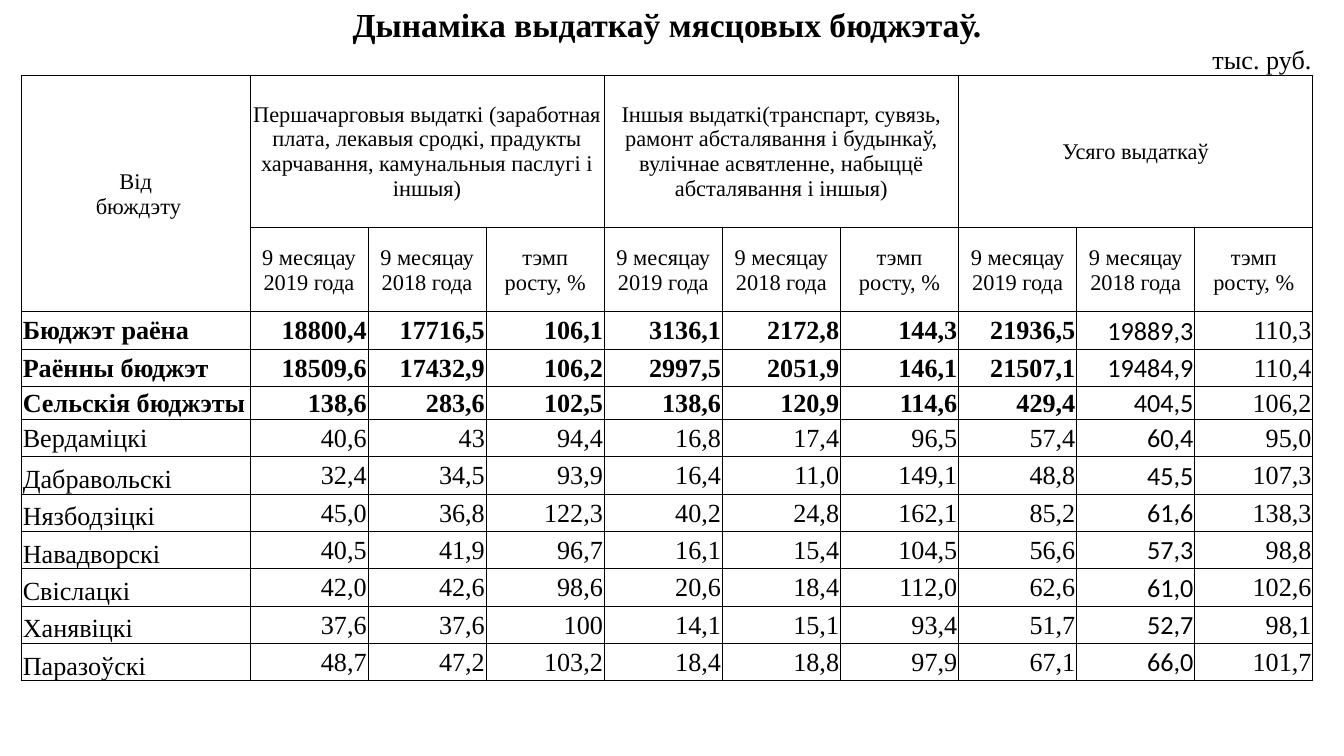
from lxml.etree import SubElement
from pptx import Presentation
from pptx.dml.color import RGBColor
from pptx.enum.text import MSO_ANCHOR as Anchor, PP_ALIGN as Align
from pptx.oxml.ns import qn
from pptx.util import Inches, Pt

COLORS = {"text": "000000", "border": "000000"}
SERIF, SANS = "Times New Roman", "Calibri"

LEFT, TOP, WIDTH = 0.16, 0.03, 9.61
NAME_WIDTH = 1.7
LINE_HEIGHT = 20 / 72
ROW_HEIGHTS = [0.3, 0.23, 1.13, 0.63, LINE_HEIGHT, LINE_HEIGHT, 0.23] + [LINE_HEIGHT] * 7
COLUMNS = 10
GROUP_ROW, PERIOD_ROW, DATA_ROW = 2, 3, 4
CURRENT_YEAR_COLUMN, PAST_YEAR_COLUMN = 7, 8

GROUPS = [
    "Першачарговыя выдаткі (заработная плата, лекавыя сродкі, прадукты "
    "харчавання, камунальныя паслугі і іншыя)",
    "Іншыя выдаткі(транспарт, сувязь, рамонт абсталявання і будынкаў, "
    "вулічнае асвятленне, набыццё абсталявання і іншыя)",
    "Усяго выдаткаў",
]
PERIODS = ["9 месяцау 2019 года", "9 месяцау 2018 года", "тэмп\nросту, %"]
PERIOD_HEADINGS = ["9 месяцау\n2019 года"] + (PERIODS * len(GROUPS))[1:]

TOTALS = [
    ("Бюджэт раёна", "18800,4 17716,5 106,1 3136,1 2172,8 144,3 21936,5 19889,3 110,3"),
    ("Раённы бюджэт", "18509,6 17432,9 106,2 2997,5 2051,9 146,1 21507,1 19484,9 110,4"),
    ("Сельскія бюджэты", "138,6 283,6 102,5 138,6 120,9 114,6 429,4 404,5 106,2"),
]
VILLAGES = [
    ("Вердаміцкі", "40,6 43 94,4 16,8 17,4 96,5 57,4 60,4 95,0"),
    ("Дабравольскі", "32,4 34,5 93,9 16,4 11,0 149,1 48,8 45,5 107,3"),
    ("Нязбодзіцкі", "45,0 36,8 122,3 40,2 24,8 162,1 85,2 61,6 138,3"),
    ("Навадворскі", "40,5 41,9 96,7 16,1 15,4 104,5 56,6 57,3 98,8"),
    ("Свіслацкі", "42,0 42,6 98,6 20,6 18,4 112,0 62,6 61,0 102,6"),
    ("Ханявіцкі", "37,6 37,6 100 14,1 15,1 93,4 51,7 52,7 98,1"),
    ("Паразоўскі", "48,7 47,2 103,2 18,4 18,8 97,9 67,1 66,0 101,7"),
]


def set_borders(cell, sides):
    """Draw thin lines on the given sides (of "LRTB") and clear the others."""
    tc_pr = cell._tc.get_or_add_tcPr()
    for side in "LRTB":
        ln = SubElement(tc_pr, qn(f"a:ln{side}"), w=str(Pt(0.5)))
        if side in sides:
            fill = SubElement(ln, qn("a:solidFill"))
            SubElement(fill, qn("a:srgbClr"), val=COLORS["border"])
        else:
            SubElement(ln, qn("a:noFill"))


def prepare_cell(cell, row):
    """Set borders, fill and margins, and keep an empty cell from growing its row."""
    if row == 0:
        sides = ""
    elif row == 1:
        sides = "B"
    else:
        sides = "LRTB"
    set_borders(cell, sides)
    cell.fill.background()
    cell.margin_left = cell.margin_right = cell.margin_top = Inches(0.01)
    cell.margin_bottom = 0
    cell.text_frame.paragraphs[0]._p.get_or_add_endParaRPr().set("sz", "1200")


def write(cell, text, size=12, align=Align.CENTER, anchor=Anchor.MIDDLE,
          bold=False, font=SERIF):
    cell.text_frame.text = text
    cell.vertical_anchor = anchor
    for p in cell.text_frame.paragraphs:
        p.alignment = align
        for r in p.runs:
            r.font.size = Pt(size)
            r.font.name = font
            r.font.bold = bold
            r.font.color.rgb = RGBColor.from_string(COLORS["text"])


def add_grid(s):
    frame = s.shapes.add_table(len(ROW_HEIGHTS), COLUMNS, Inches(LEFT), Inches(TOP),
                               Inches(WIDTH), Inches(sum(ROW_HEIGHTS)))
    table = frame.table
    table.first_row = table.horz_banding = False
    value_width = (WIDTH - NAME_WIDTH) / (COLUMNS - 1)
    for i, column in enumerate(table.columns):
        column.width = Inches(value_width if i else NAME_WIDTH)
    for i, height in enumerate(ROW_HEIGHTS):
        table.rows[i].height = Inches(height)
        for j in range(COLUMNS):
            prepare_cell(table.cell(i, j), i)
    return table


def fill_headings(table):
    last = COLUMNS - 1
    table.cell(0, 0).merge(table.cell(0, last))
    write(table.cell(0, 0), "Дынаміка выдаткаў мясцовых бюджэтаў.", size=18,
          anchor=Anchor.BOTTOM, bold=True)
    for col in (1, 3, 5):
        table.cell(1, col).merge(table.cell(1, col + 1))
    write(table.cell(1, last), "тыс. руб.", size=14, align=Align.RIGHT,
          anchor=Anchor.BOTTOM)

    table.cell(GROUP_ROW, 0).merge(table.cell(PERIOD_ROW, 0))
    write(table.cell(GROUP_ROW, 0), "Від\n бюждэту")
    for i, group in enumerate(GROUPS):
        first = 1 + i * len(PERIODS)
        table.cell(GROUP_ROW, first).merge(table.cell(GROUP_ROW, first + 2))
        write(table.cell(GROUP_ROW, first), group)
    for col, period in enumerate(PERIOD_HEADINGS, start=1):
        write(table.cell(PERIOD_ROW, col), period)


def fill_budgets(table):
    for i, (name, values) in enumerate(TOTALS + VILLAGES):
        row = DATA_ROW + i
        is_total = i < len(TOTALS)
        # The totals and the first village are centred, later names sit low.
        anchor = Anchor.MIDDLE if i <= len(TOTALS) else Anchor.BOTTOM
        write(table.cell(row, 0), name, size=14, align=Align.LEFT,
              anchor=anchor, bold=is_total)
        for col, value in enumerate(values.split(), start=1):
            write(table.cell(row, col), value, size=14, align=Align.RIGHT,
                  bold=is_total and col <= CURRENT_YEAR_COLUMN,
                  font=SANS if col == PAST_YEAR_COLUMN else SERIF)


def main():
    prs = Presentation()
    prs.slide_width = Inches(10)
    prs.slide_height = prs.slide_width * 9 // 16
    s = prs.slides.add_slide(prs.slide_layouts[6])
    table = add_grid(s)
    fill_headings(table)
    fill_budgets(table)
    prs.save("out.pptx")


if __name__ == "__main__":
    main()
